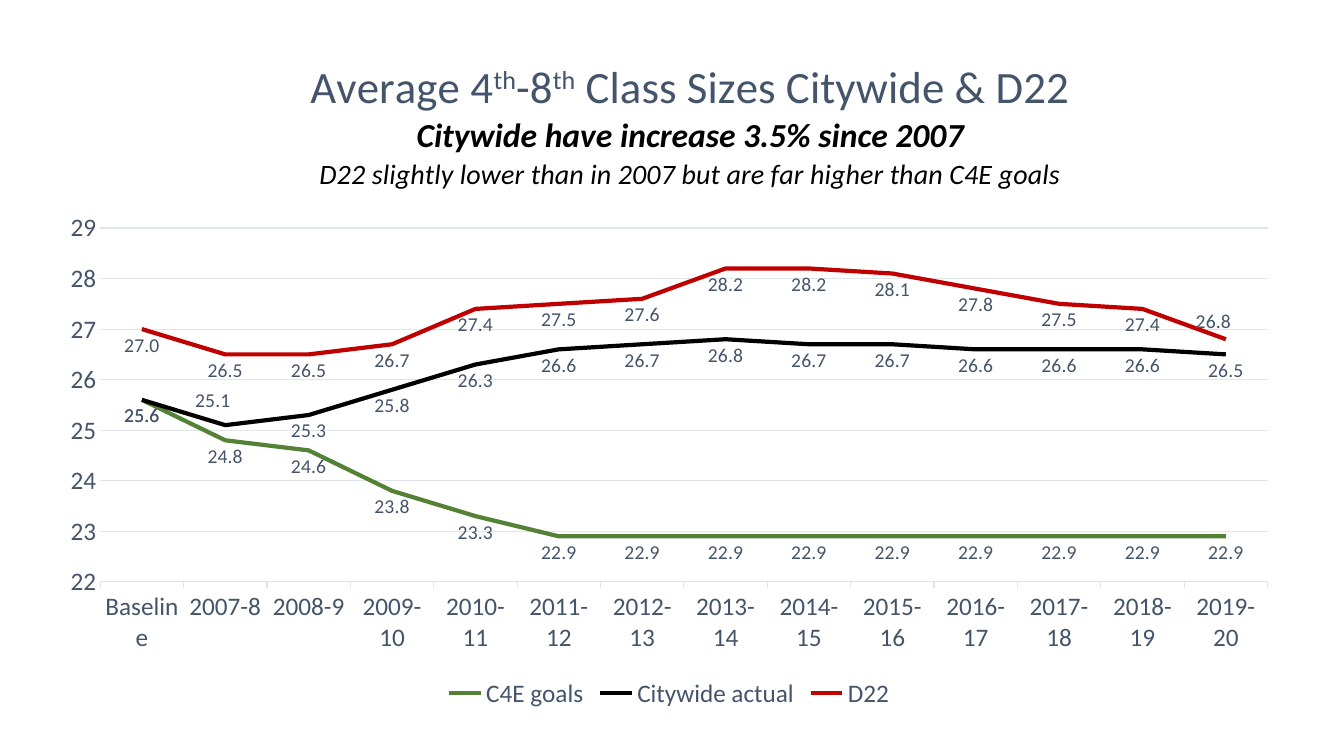
from dataclasses import dataclass

from lxml import etree
from pptx import Presentation
from pptx.chart.data import CategoryChartData
from pptx.dml.color import RGBColor
from pptx.enum.chart import (XL_CHART_TYPE, XL_LABEL_POSITION, XL_LEGEND_POSITION,
                             XL_MARKER_STYLE, XL_TICK_MARK)
from pptx.oxml.ns import qn
from pptx.util import Inches, Pt

LINE_CHART = XL_CHART_TYPE.LINE
BELOW = XL_LABEL_POSITION.BELOW
BOTTOM = XL_LEGEND_POSITION.BOTTOM
NO_MARKER = XL_MARKER_STYLE.NONE
TICK_OUT, TICK_NONE = XL_TICK_MARK.OUTSIDE, XL_TICK_MARK.NONE
BLANK_LAYOUT = 6


@dataclass(frozen=True)
class Theme:
    font: str = "Calibri"
    slate: str = "44546A"
    black: str = "000000"
    green: str = "548235"
    red: str = "C00000"
    grid: str = "E0E5EB"
    title_size: int = 32
    subtitle_size: int = 24
    note_size: int = 20
    axis_size: int = 18
    label_size: int = 14


THEME = Theme()

YEARS = ["Baseline"] + [f"{year}-{(year + 1) % 100}" for year in range(2007, 2020)]

# Name, colour, values, and shifted labels as {point: (x, y) share of the chart}
SERIES = [
    ("C4E goals", THEME.green, [25.6, 24.8, 24.6, 23.8, 23.3] + [22.9] * 9, {}),
    ("Citywide actual", THEME.black,
     [25.6, 25.1, 25.3, 25.8, 26.3, 26.6, 26.7, 26.8, 26.7, 26.7, 26.6, 26.6, 26.6, 26.5],
     {1: (-0.01, -0.06)}),
    ("D22", THEME.red,
     [27, 26.5, 26.5, 26.7, 27.4, 27.5, 27.6, 28.2, 28.2, 28.1, 27.8, 27.5, 27.4, 26.8],
     {13: (-0.01, -0.05)}),
]

# Each line: size, colour, bold, italic, and (text, superscript) spans
TITLE_LINES = [
    (THEME.title_size, THEME.slate, False, False,
     [("Average 4", False), ("th", True), ("-8", False), ("th", True),
      (" Class Sizes Citywide & D22", False)]),
    (THEME.subtitle_size, THEME.black, True, True,
     [("Citywide have increase 3.5% since 2007", False)]),
    (THEME.note_size, THEME.black, False, True,
     [("D22 slightly lower than in 2007 but are far higher than C4E goals", False)]),
]


class SlideBuilder:
    def __init__(self, page, theme):
        self.page = page
        self.theme = theme

    def style_font(self, font, size, color, bold=False, italic=False):
        font.name = self.theme.font
        font.size = Pt(size)
        font.bold = bold
        font.italic = italic
        font.color.rgb = RGBColor.from_string(color)

    def style_line(self, line, color, width):
        line.color.rgb = RGBColor.from_string(color)
        line.width = Pt(width)

    def set_layout(self, parent, index, **settings):
        """Give a chart part a manual layout in shares of the chart."""
        for old_layout in parent.findall(qn("c:layout")):
            parent.remove(old_layout)
        layout = etree.Element(qn("c:layout"))
        manual = etree.SubElement(layout, qn("c:manualLayout"))
        for name, value in settings.items():
            etree.SubElement(manual, qn(f"c:{name}"), val=str(value))
        parent.insert(index, layout)

    def line_chart(self, left, top, width, height, categories, series_rows):
        data = CategoryChartData(number_format="0.0")
        data.categories = categories
        for name, _, values, _ in series_rows:
            data.add_series(name, values)
        chart = self.page.shapes.add_chart(
            LINE_CHART, Inches(left), Inches(top), Inches(width), Inches(height), data).chart
        self.style_font(chart.font, self.theme.axis_size, self.theme.slate)
        plot_area = chart.element.find(".//" + qn("c:plotArea"))
        self.set_layout(plot_area, 0, layoutTarget="inner", xMode="edge", yMode="edge",
                        x=0.044, y=0.281, w=0.936, h=0.524)
        for series, (_, color, _, shifts) in zip(chart.plots[0].series, series_rows):
            self.series(series, color, shifts)
        self.axes(chart)
        chart.has_legend = True
        chart.legend.position = BOTTOM
        chart.legend.include_in_layout = False
        self.style_font(chart.legend.font, self.theme.axis_size, self.theme.slate)
        return chart

    def series(self, series, color, shifts):
        series.smooth = False
        series.marker.style = NO_MARKER
        self.style_line(series.format.line, color, 3)
        labels = series.data_labels
        labels.show_value = True
        labels.number_format = "0.0"
        labels.number_format_is_linked = False
        labels.position = BELOW
        self.style_font(labels.font, self.theme.label_size, self.theme.slate)
        # Labels moved clear of the lines
        for point, (shift_x, shift_y) in shifts.items():
            label = series.points[point].data_label
            label.position = BELOW
            self.style_font(label.font, self.theme.label_size, self.theme.slate)
            for index in labels._element.findall(f"{qn('c:dLbl')}/{qn('c:idx')}"):
                if index.get("val") == str(point):
                    self.set_layout(index.getparent(), 1, x=shift_x, y=shift_y)

    def axes(self, chart):
        years, sizes = chart.category_axis, chart.value_axis
        for axis, tick in ((years, TICK_OUT), (sizes, TICK_NONE)):
            axis.major_tick_mark = tick
            axis.minor_tick_mark = TICK_NONE
            self.style_font(axis.tick_labels.font, self.theme.axis_size, self.theme.slate)
        self.style_line(years.format.line, self.theme.grid, 0.75)
        sizes.format.line.fill.background()
        sizes.minimum_scale, sizes.maximum_scale, sizes.major_unit = 22, 29, 1
        sizes.tick_labels.number_format = "0"
        sizes.tick_labels.number_format_is_linked = False
        self.style_line(sizes.major_gridlines.format.line, self.theme.grid, 0.75)

    def chart_title(self, chart, lines):
        title = chart.chart_title
        frame = title.text_frame
        for number, (size, color, bold, italic, spans) in enumerate(lines):
            para = frame.add_paragraph() if number else frame.paragraphs[0]
            for text, superscript in spans:
                span = para.add_run()
                span.text = text
                self.style_font(span.font, size, color, bold, italic)
                if superscript:
                    span._r.get_or_add_rPr().set("baseline", "30000")
        self.set_layout(title._element, 1, xMode="edge", yMode="edge", x=0.21, y=0.025)


def main():
    deck = Presentation()
    deck.slide_width, deck.slide_height = Inches(13.33), Inches(7.5)
    page = deck.slides.add_slide(deck.slide_layouts[BLANK_LAYOUT])
    builder = SlideBuilder(page, THEME)

    # Class size chart with its three-line heading
    chart = builder.line_chart(0.45, 0.38, 12.37, 6.7, YEARS, SERIES)
    builder.chart_title(chart, TITLE_LINES)

    deck.save("out.pptx")


if __name__ == "__main__":
    main()
